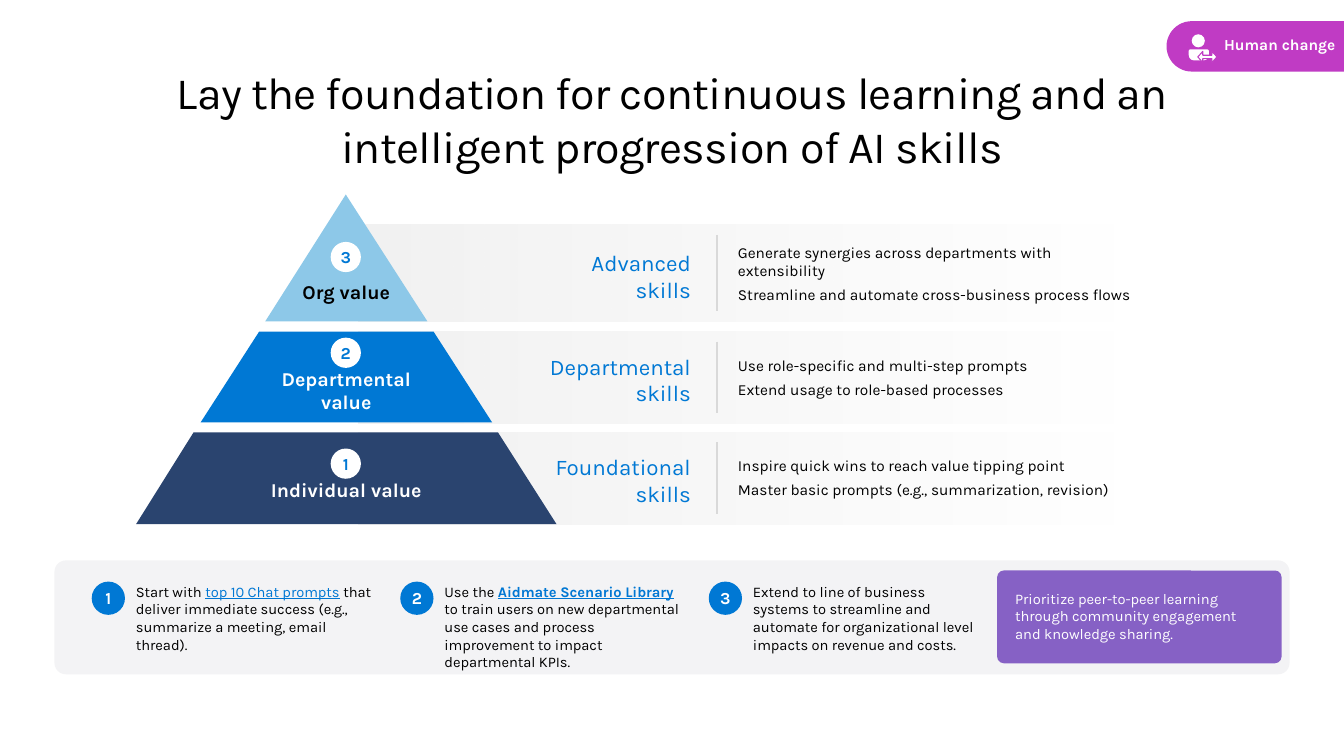
"""Build the AI skills progression slide."""
from dataclasses import dataclass

from lxml import etree
from pptx import Presentation
from pptx import util as u
from pptx.dml.color import RGBColor
from pptx.enum import shapes, text
from pptx.oxml import ns

SCALE = 9144


@dataclass(frozen=True)
class Theme:
    """Hold the colours, type sizes and font."""
    font: str = "Karla"
    white: str = "FFFFFF"
    black: str = "000000"
    blue: str = "0078D4"
    link: str = "0077D3"
    navy: str = "2A446F"
    sky: str = "8DC8E8"
    magenta: str = "C03BC4"
    purple: str = "8661C5"
    band: str = "F2F2F2"
    panel: str = "F3F3F5"
    divider: str = "D9D9D9"
    title: float = 32
    heading: float = 16
    label: float = 14
    badge: float = 12
    body: float = 11
    step: float = 10.5


THEME = Theme()
SHAPE = shapes.MSO_SHAPE
ALIGN = text.PP_ALIGN
MIDDLE = text.MSO_ANCHOR.MIDDLE

TIERS = [
    dict(number="1", label="Individual value", label_box=(250, 469, 187, 31), label_color=THEME.white,
         color=THEME.navy, outline=[(552, 520), (494, 429), (192, 429), (135, 520)],
         top=429, height=91, badge_top=445, heading="Foundational\vskills", heading_left=437, heading_top=445,
         width=438, points=["Inspire quick wins to reach value tipping point",
                            "Master basic prompts (e.g., summarization, revision)"]),
    dict(number="2", label="Departmental value", label_box=(250, 359, 187, 31), label_color=THEME.white,
         color=THEME.blue, outline=[(257, 329), (199, 419), (488, 419), (430, 329)],
         top=329, height=91, badge_top=335, heading="Departmental skills", heading_left=515, heading_top=345,
         width=343, points=["Use role-specific and multi-step prompts",
                            "Extend usage to role-based processes"]),
    dict(number="3", label="Org value", label_box=(290, 273, 107, 34), label_color=THEME.black,
         color=THEME.sky, outline=[(424, 319), (343, 193), (263, 319)],
         top=223, height=96, badge_top=240, heading="Advanced\vskills", heading_left=437, heading_top=242,
         width=411, points=["Generate synergies across departments with extensibility",
                            "Streamline and automate cross-business process flows"]),
]

STEPS = [
    (253, "Start with ", "top 10 Chat prompts",
     " that deliver immediate success (e.g., summarize a meeting, email thread).", False),
    (253, "Use the ", "Aidmate Scenario Library",
     "\vto train users on new departmental use cases and process improvement to impact departmental KPIs.", True),
    (246, "Extend to line of business systems to streamline and automate for organizational level "
          "impacts on revenue and costs.", "", "", False),
]


def px(*lengths):
    """Turn px lengths into EMU."""
    return [u.Emu(length * SCALE) for length in lengths]


def rgb(color):
    """Make a colour from its hex code."""
    return RGBColor.from_string(color)


def paint(shape, color):
    """Give a shape a plain fill without line or shadow."""
    shape.shadow.inherit = False
    shape.fill.solid()
    shape.fill.fore_color.rgb = rgb(color)
    shape.line.fill.background()
    return shape


def add_block(slide, kind, box, color, adjustments=()):
    """Add a filled preset shape."""
    shape = paint(slide.shapes.add_shape(kind, *px(*box)), color)
    for index, value in enumerate(adjustments):
        shape.adjustments[index] = value
    return shape


def style(paragraph, size, color, bold=False, align=ALIGN.LEFT):
    """Set the alignment and font of a paragraph."""
    paragraph.alignment = align
    font = paragraph.font
    font.name, font.size, font.bold = THEME.font, u.Pt(size), bold
    font.color.rgb = rgb(color)


def set_insets(frame):
    """Remove the inner margins of a text frame."""
    frame.margin_left = frame.margin_top = frame.margin_right = frame.margin_bottom = 0


def add_text(slide, box, lines, size, color, bold=False, align=ALIGN.LEFT, anchor=text.MSO_ANCHOR.TOP):
    """Add a wrapping text box with one paragraph per line and return its frame."""
    frame = slide.shapes.add_textbox(*px(*box)).text_frame
    frame.word_wrap = True
    frame.vertical_anchor = anchor
    for index, line in enumerate(lines):
        paragraph = frame.add_paragraph() if index else frame.paragraphs[0]
        paragraph.text = line
        style(paragraph, size, color, bold, align)
    return frame


def add_badge(slide, left, top, diameter, number, fill, color):
    """Add a numbered circle."""
    frame = add_block(slide, SHAPE.OVAL, (left, top, diameter, diameter), fill).text_frame
    set_insets(frame)
    frame.word_wrap = False
    frame.vertical_anchor = MIDDLE
    frame.paragraphs[0].text = number
    style(frame.paragraphs[0], THEME.badge, color, True, ALIGN.CENTER)


def add_band(slide, top, height):
    """Add a band that fades out to the right."""
    band = add_block(slide, SHAPE.RECTANGLE, (356, top, 752, height), THEME.band)
    band.fill.gradient()
    band.fill.gradient_angle = 0
    for stop, position in zip(band.fill.gradient_stops, (0, 1)):
        stop.color.rgb = rgb(THEME.band)
        stop.position = position
    end_color = band.element.xpath(".//a:gs[2]/a:srgbClr")[0]
    etree.SubElement(end_color, ns.qn("a:alpha")).set("val", "0")


def add_divider(slide, top, bottom):
    """Add a thin vertical line between heading and points."""
    line = slide.shapes.add_connector(shapes.MSO_CONNECTOR.STRAIGHT, *px(711, top, 711, bottom))
    line.line.color.rgb = rgb(THEME.divider)
    line.line.width = u.Pt(1)
    etree.SubElement(line.element.spPr, ns.qn("a:effectLst"))


def add_tier(slide, tier):
    """Add one level of the pyramid with its skills."""
    top, bottom = tier["top"], tier["top"] + tier["height"]
    add_band(slide, top, tier["height"])
    builder = slide.shapes.build_freeform(*tier["outline"][0], scale=SCALE)
    builder.add_line_segments(tier["outline"][1:], close=True)
    paint(builder.convert_to_shape(), tier["color"])
    add_badge(slide, 328, tier["badge_top"], 30, tier["number"], THEME.white, THEME.blue)
    add_divider(slide, top + 10, bottom - 10)
    add_text(slide, tier["label_box"], [tier["label"]], THEME.label, tier["label_color"], True, ALIGN.CENTER)
    left, heading_top = tier["heading_left"], tier["heading_top"]
    add_text(slide, (left, heading_top, 695 - left, 64), [tier["heading"]],
             THEME.heading, THEME.blue, align=ALIGN.RIGHT)
    points = add_text(slide, (722, heading_top + 5, tier["width"], 48), tier["points"],
                      THEME.body, THEME.black, anchor=MIDDLE)
    for paragraph in points.paragraphs:
        paragraph.space_after = u.Pt(4)


def add_step(slide, index, width, lead, link, rest, bold):
    """Add a numbered step with an underlined phrase."""
    left = 91 + 306 * index
    add_badge(slide, left, 577, 33, str(index + 1), THEME.blue, THEME.white)
    paragraph = add_text(slide, (left + 34, 573, width, 81), [lead], THEME.step, THEME.black).paragraphs[0]
    if link:
        run = paragraph.add_run()
        run.text = link
        run.font.underline = True
        run.font.bold = bold
        run.font.color.rgb = rgb(THEME.link)
        for part in rest.partition("\v"):
            if part == "\v":
                paragraph.add_line_break()
            elif part:
                paragraph.add_run().text = part


def add_tab(slide):
    """Add the corner tab with its person icon."""
    add_block(slide, SHAPE.ROUND_2_SAME_RECTANGLE, (1220, -42, 50, 176), THEME.magenta, (0.5, 0)).rotation = 270
    add_block(slide, SHAPE.OVAL, (1182, 34, 13, 13), THEME.white)
    add_block(slide, SHAPE.ROUND_2_SAME_RECTANGLE, (1179, 49, 20, 11), THEME.white, (0.15, 0.5))
    arrow = add_block(slide, SHAPE.LEFT_RIGHT_ARROW, (1188, 51, 19, 11), THEME.white, (0.3, 0.45))
    arrow.line.color.rgb = rgb(THEME.magenta)
    arrow.line.width = u.Pt(0.75)
    frame = add_text(slide, (1214, 31, 119, 29), ["Human change"], THEME.body, THEME.white, True, anchor=MIDDLE)
    set_insets(frame)
    frame.paragraphs[0].line_spacing = 0.9


def add_title(slide):
    """Add the centred headline."""
    frame = add_text(slide, (154, 64, 1025, 108),
                     ["Lay the foundation for continuous learning and an intelligent progression of AI skills"],
                     THEME.title, THEME.black, align=ALIGN.CENTER)
    set_insets(frame)
    frame.paragraphs[0]._p.xpath("a:pPr/a:defRPr")[0].set("spc", "-50")


def main():
    """Build and save the slide."""
    presentation = Presentation()
    presentation.slide_width, presentation.slide_height = px(1333, 750)
    slide = presentation.slides.add_slide(presentation.slide_layouts[6])
    add_title(slide)
    add_tab(slide)
    for tier in TIERS:
        add_tier(slide, tier)
    add_block(slide, SHAPE.ROUNDED_RECTANGLE, (54, 556, 1225, 113), THEME.panel, (0.1,))
    for index, step in enumerate(STEPS):
        add_step(slide, index, *step)
    add_block(slide, SHAPE.ROUNDED_RECTANGLE, (989, 566, 282, 92), THEME.purple, (0.07,))
    add_text(slide, (997, 580, 265, 63),
             ["Prioritize peer-to-peer learning through community engagement and knowledge sharing."],
             THEME.step, THEME.white)
    presentation.save("out.pptx")


if __name__ == "__main__":
    main()
